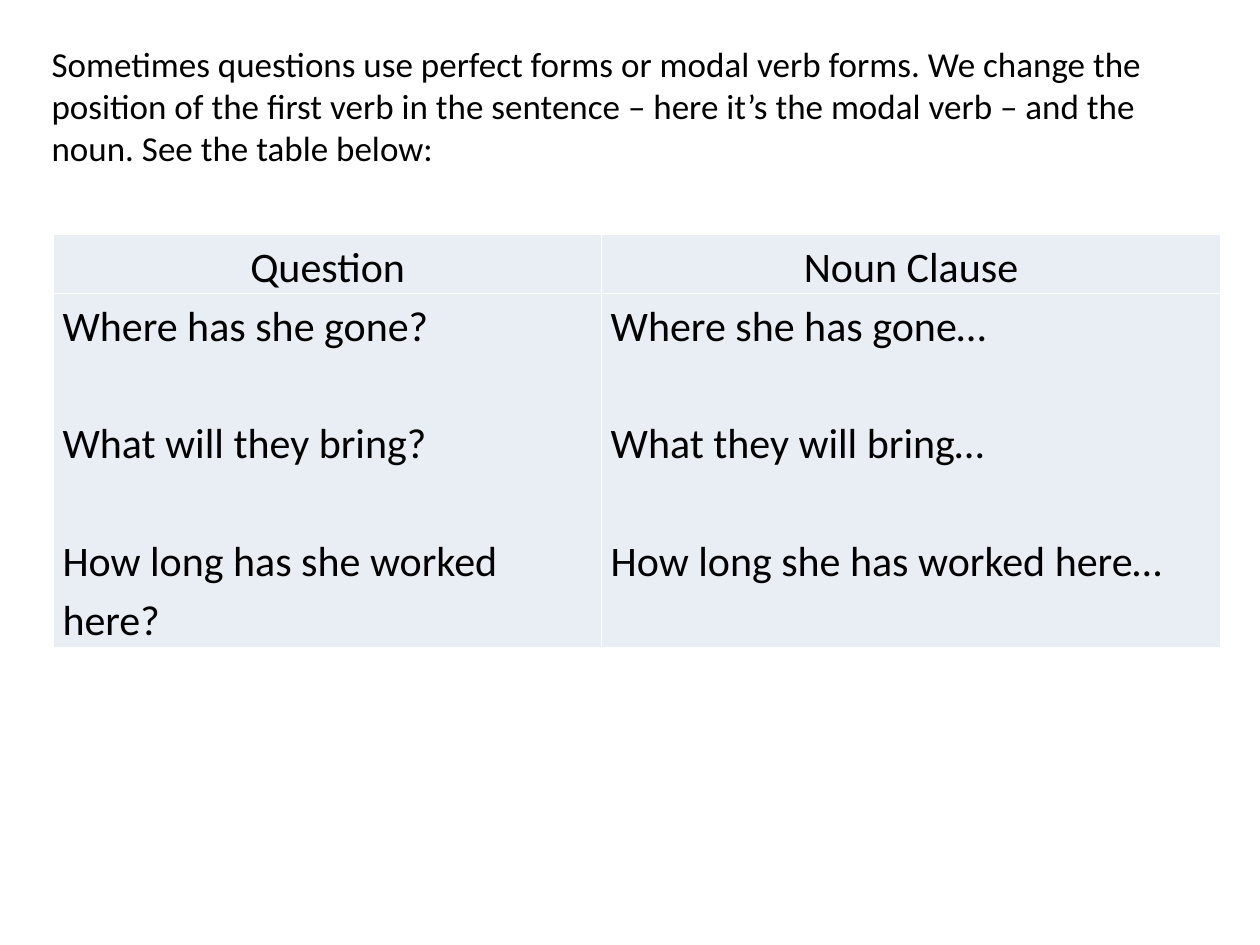
from lxml.etree import SubElement
from pptx import Presentation
from pptx.dml.color import RGBColor
from pptx.enum.text import PP_ALIGN
from pptx.oxml.ns import qn
from pptx.util import Cm, Pt

INTRO = ("Sometimes questions use perfect forms or modal verb forms. We change the "
         "position of the first verb in the sentence – here it’s the modal verb – "
         "and the noun. See the table below:")
COLUMNS = [
    ("Question", 11.05,
     ["Where has she gone?", "What will they bring?", "How long has she worked here?"]),
    ("Noun Clause", 12.47,
     ["Where she has gone…", "What they will bring…", "How long she has worked here…"]),
]
ROW_HEIGHTS = [1.12, 7.14]
BLACK, WHITE, PALE_BLUE = "000000", "FFFFFF", "E9EDF4"
LINE_SPACING = 1.15
EXAMPLE_GAP = Pt(33.7)  # one line of the table text


def color(hex_code):
    return RGBColor.from_string(hex_code)


def set_font(p, size):
    p.font.name = "Calibri"
    p.font.size = Pt(size)
    p.font.color.rgb = color(BLACK)


def add_borders(cell, hex_code, width):
    tc_pr = cell._tc.get_or_add_tcPr()
    for side in ("lnL", "lnR", "lnT", "lnB"):
        ln = SubElement(tc_pr, qn(f"a:{side}"), w=str(Pt(width)))
        fill = SubElement(ln, qn("a:solidFill"))
        SubElement(fill, qn("a:srgbClr"), val=hex_code)


def fill_cell(cell, lines, align):
    add_borders(cell, WHITE, 1)
    cell.fill.solid()
    cell.fill.fore_color.rgb = color(PALE_BLUE)
    cell.margin_left = cell.margin_right = Cm(0.18)
    cell.margin_top = cell.margin_bottom = 0
    tf = cell.text_frame
    for i, line in enumerate(lines):
        p = tf.add_paragraph() if i else tf.paragraphs[0]
        p.text = line
        p.alignment = align
        p.line_spacing = LINE_SPACING
        if i:
            p.space_before = EXAMPLE_GAP
        set_font(p, 24)


prs = Presentation()
prs.slide_width, prs.slide_height = Cm(25.4), Cm(19.05)
s = prs.slides.add_slide(prs.slide_layouts[6])

widths = [width for _, width, _ in COLUMNS]
table = s.shapes.add_table(len(ROW_HEIGHTS), len(COLUMNS), Cm(1.08), Cm(4.73),
                           Cm(sum(widths)), Cm(sum(ROW_HEIGHTS))).table
table.first_row = table.horz_banding = False
for row, height in zip(table.rows, ROW_HEIGHTS):
    row.height = Cm(height)
for col, (heading, width, examples) in enumerate(COLUMNS):
    table.columns[col].width = Cm(width)
    fill_cell(table.cell(0, col), [heading], PP_ALIGN.CENTER)
    fill_cell(table.cell(1, col), examples, PP_ALIGN.LEFT)

tf = s.shapes.add_textbox(Cm(0.79), Cm(0.74), Cm(23.8), Cm(3.58)).text_frame
tf.word_wrap = True
p = tf.paragraphs[0]
p.text = INTRO
set_font(p, 20)

prs.save("out.pptx")
